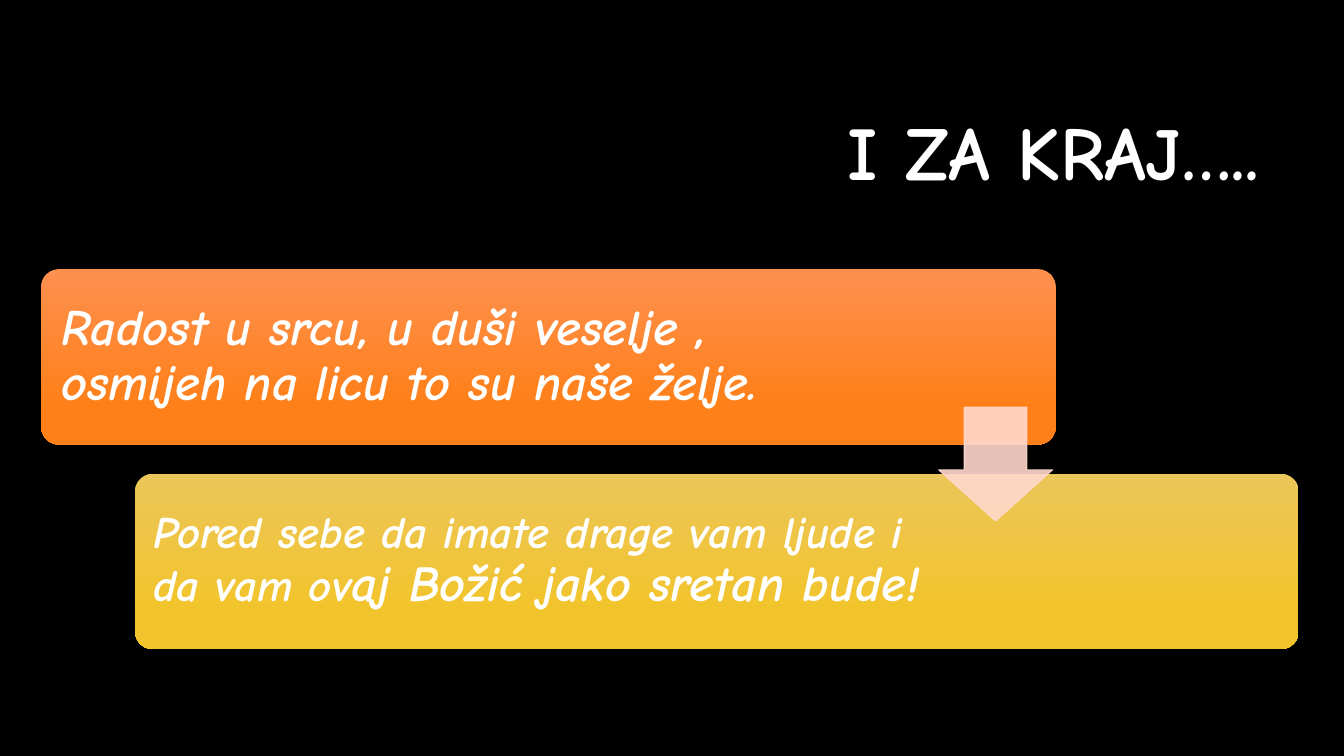
from dataclasses import dataclass

from lxml import etree
from pptx import Presentation
from pptx.dml.color import RGBColor
from pptx.enum import shapes, text
from pptx.oxml import ns
from pptx.util import Inches, Pt


@dataclass(frozen=True)
class Theme:
    font: str = "Comic Neue"
    background: str = "000000"
    ink: str = "FFFFFF"
    orange: tuple = ("FE904F", "FF8019")
    gold: tuple = ("EBC659", "F2C42C")
    arrow: str = "FFD8CD"
    title_size: int = 54
    large: int = 36
    small: int = 32


THEME = Theme()


def rgb(value):
    return RGBColor.from_string(value)


def place(sp, left, top, width, height):
    sp.left, sp.top = Inches(left), Inches(top)
    sp.width, sp.height = Inches(width), Inches(height)


def write(sp, runs, align=text.PP_ALIGN.LEFT, italic=False, inset=None):
    tf = sp.text_frame
    tf.word_wrap = True
    tf.auto_size = text.MSO_AUTO_SIZE.NONE
    tf.vertical_anchor = text.MSO_ANCHOR.MIDDLE
    if inset is not None:
        tf.margin_left = tf.margin_right = Inches(inset)
        tf.margin_top = tf.margin_bottom = Inches(inset)
    p = tf.paragraphs[0]
    p.alignment = align
    p.line_spacing = 0.9
    for words, size in runs:
        r = p.add_run()
        r.text = words
        r.font.name = THEME.font
        r.font.size = Pt(size)
        r.font.bold = True
        r.font.italic = italic
        r.font.color.rgb = rgb(THEME.ink)


def add_card(s, left, top, width, colors, runs, text_width, inset):
    height, gap = 1.74, 0.05
    sp = s.shapes.add_shape(shapes.MSO_SHAPE.ROUNDED_RECTANGLE,
                            Inches(left), Inches(top), Inches(width), Inches(height))
    sp.shadow.inherit = False
    sp.adjustments[0] = 0.1
    sp.line.fill.background()
    sp.fill.gradient()
    sp.fill.gradient_angle = 270
    for stop, color, position in zip(sp.fill.gradient_stops, colors, (0, 0.78)):
        stop.color.rgb = rgb(color)
        stop.position = position
    box = s.shapes.add_textbox(Inches(left + gap), Inches(top + gap),
                               Inches(text_width), Inches(height - 2 * gap))
    write(box, runs, italic=True, inset=inset)


def add_arrow(s, left, top, size, color, opacity):
    sp = s.shapes.add_shape(shapes.MSO_SHAPE.DOWN_ARROW,
                            Inches(left), Inches(top), Inches(size), Inches(size))
    sp.shadow.inherit = False
    sp.adjustments[0], sp.adjustments[1] = 0.55, 0.45
    sp.line.width = Pt(0.75)
    for fill in (sp.fill, sp.line.fill):
        fill.solid()
        fill.fore_color.rgb = rgb(color)
    for clr in sp.element.spPr.iter(ns.qn("a:srgbClr")):
        etree.SubElement(clr, ns.qn("a:alpha"), val=str(opacity * 1000))


def main():
    prs = Presentation()
    prs.slide_width, prs.slide_height = Inches(13.33), Inches(7.5)
    s = prs.slides.add_slide(prs.slide_layouts[5])
    s.background.fill.solid()
    s.background.fill.fore_color.rgb = rgb(THEME.background)

    place(s.shapes.title, 3.17, 0.84, 9.42, 1.41)
    write(s.shapes.title, [("I ZA KRAJ…..", THEME.title_size)], align=text.PP_ALIGN.RIGHT)

    add_card(s, 0.41, 2.67, 10.06, THEME.orange,
             [("Radost u srcu, u duši veselje , osmijeh na licu to su naše želje.", THEME.large)],
             text_width=8.26, inset=0.15)
    add_card(s, 1.34, 4.7, 11.54, THEME.gold,
             [("Pored sebe da imate drage vam ljude i da vam ov", THEME.small),
              ("aj Božić jako sretan bude!", THEME.large)],
             text_width=8.1, inset=0.13)
    add_arrow(s, 9.31, 4.04, 1.13, THEME.arrow, opacity=90)
    prs.save("out.pptx")


if __name__ == "__main__":
    main()
